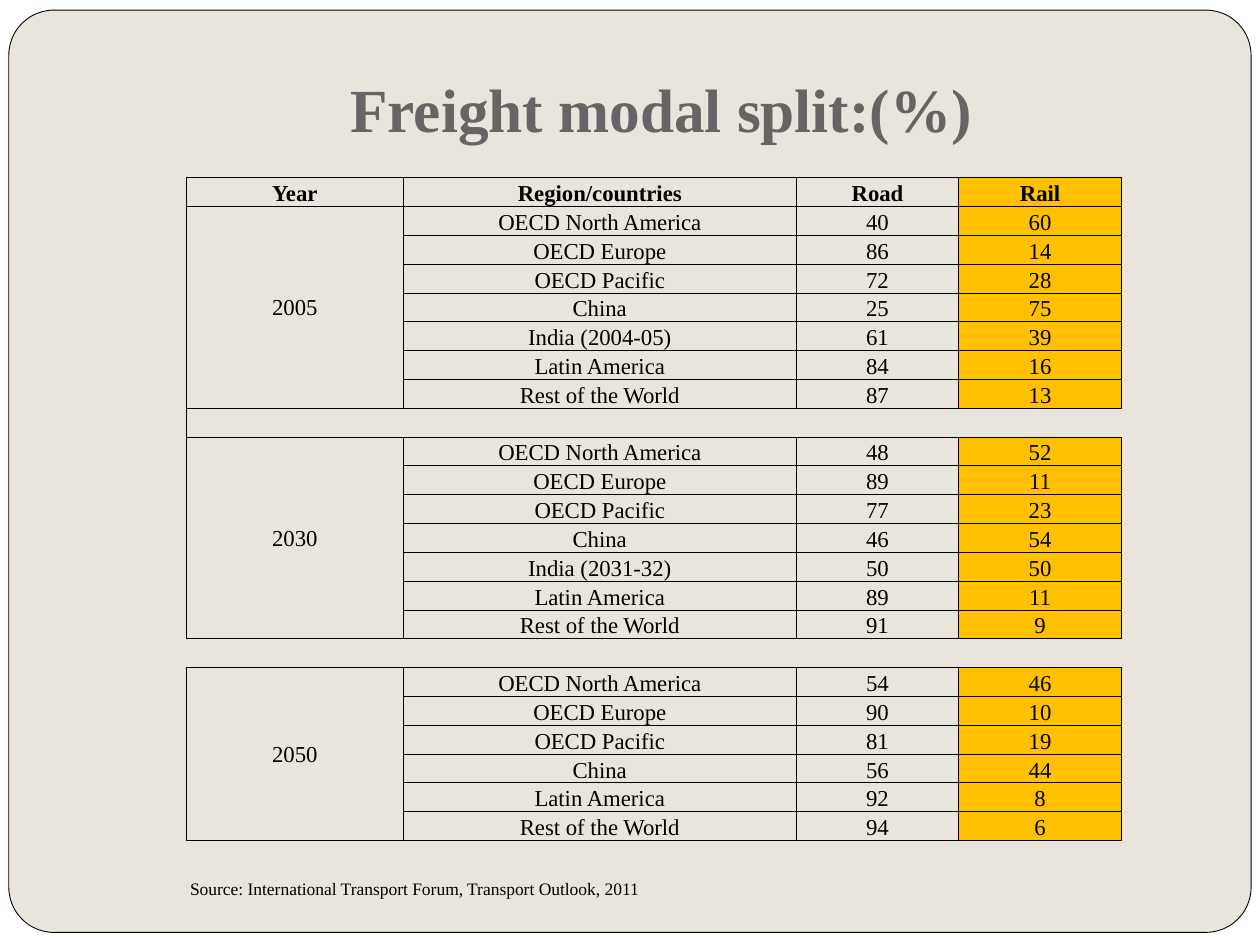
"""Build the freight modal split slide with its table by year and region."""
from lxml import etree
from pptx import Presentation
from pptx.dml.color import RGBColor
from pptx.enum import shapes, text
from pptx.oxml import ns
from pptx.util import Inches, Pt

BLACK = RGBColor(0x00, 0x00, 0x00)
WHITE = RGBColor(0xFF, 0xFF, 0xFF)
SAND = RGBColor(0xE9, 0xE5, 0xDC)
GREY = RGBColor(0x69, 0x64, 0x64)
GOLD = RGBColor(0xFF, 0xC0, 0x00)
FACE = "Times New Roman"
HEAD = ("Year", "Region/countries", "Road", "Rail")
DATA = {
    "2005": [("OECD North America", 40, 60), ("OECD Europe", 86, 14),
             ("OECD Pacific", 72, 28), ("China", 25, 75),
             ("India (2004-05)", 61, 39), ("Latin America", 84, 16),
             ("Rest of the World", 87, 13)],
    "2030": [("OECD North America", 48, 52), ("OECD Europe", 89, 11),
             ("OECD Pacific", 77, 23), ("China", 46, 54),
             ("India (2031-32)", 50, 50), ("Latin America", 89, 11),
             ("Rest of the World", 91, 9)],
    "2050": [("OECD North America", 54, 46), ("OECD Europe", 90, 10),
             ("OECD Pacific", 81, 19), ("China", 56, 44),
             ("Latin America", 92, 8), ("Rest of the World", 94, 6)],
}


def style(para, size, color, bold=False):
    font = para.font
    font.name, font.size, font.bold = FACE, Pt(size), bold
    font.color.rgb = color


def edge(cell, sides):
    props = cell._tc.get_or_add_tcPr()
    for side in "LRTB":
        line = etree.SubElement(props, ns.qn(f"a:ln{side}"), w=str(Pt(0.5)))
        if side in sides:
            fill = etree.SubElement(line, ns.qn("a:solidFill"))
            etree.SubElement(fill, ns.qn("a:srgbClr"), val=str(BLACK))
        else:
            etree.SubElement(line, ns.qn("a:noFill"))


deck = Presentation()
deck.slide_width, deck.slide_height = Inches(10), Inches(7.5)
slide = deck.slides.add_slide(deck.slide_layouts[5])
slide.background.fill.solid()
slide.background.fill.fore_color.rgb = WHITE

panel = slide.shapes.add_shape(
    shapes.MSO_SHAPE.ROUNDED_RECTANGLE,
    Inches(0.07), Inches(0.08), Inches(9.86), Inches(7.32))
panel.adjustments[0] = 0.049
panel.shadow.inherit = False
panel.fill.solid()
panel.fill.fore_color.rgb = SAND
panel.line.color.rgb = BLACK
panel.line.width = Pt(0.5)
slide.shapes.element.insert(2, panel.element)

title = slide.shapes.title
title.left, title.top = Inches(1), Inches(0.39)
title.width, title.height = Inches(8.5), Inches(0.86)
frame = title.text_frame
frame.text = "Freight modal split:(%)"
frame.vertical_anchor = text.MSO_ANCHOR.BOTTOM
frame.margin_bottom = Inches(0.1)
frame.paragraphs[0].alignment = text.PP_ALIGN.CENTER
style(frame.paragraphs[0], 35, GREY, True)

rows, spans, gaps = [HEAD], [], []
for year, group in DATA.items():
    if spans:
        gaps.append(len(rows))
        rows.append(("",) * 4)
    spans.append((len(rows), len(rows) + len(group) - 1))
    rows += [(year if i == 0 else "", *item) for i, item in enumerate(group)]

table = slide.shapes.add_table(
    len(rows), 4, Inches(1.48), Inches(1.41), Inches(7.42), Inches(5.27)).table
table.first_row = table.horz_banding = False
for col, width in zip(table.columns, (1.72, 3.12, 1.29, 1.29)):
    col.width = Inches(width)
for r, row in enumerate(rows):
    for c, value in enumerate(row):
        cell = table.cell(r, c)
        gap = r in gaps
        sides = "LRTB"
        if gap:
            sides = "LTB" if r == gaps[0] and c == 0 else "TB"
        edge(cell, sides)
        if c == 3 and not gap:
            cell.fill.solid()
            cell.fill.fore_color.rgb = GOLD
        else:
            cell.fill.background()
        cell.margin_left = cell.margin_right = cell.margin_top = Inches(0.01)
        cell.margin_bottom = 0
        middle = c == 0 and r > 0
        cell.vertical_anchor = (text.MSO_ANCHOR.MIDDLE if middle
                                else text.MSO_ANCHOR.BOTTOM)
        para = cell.text_frame.paragraphs[0]
        if value != "":
            para.text = str(value)
        para.alignment = text.PP_ALIGN.CENTER
        style(para, 13, BLACK, r == 0)
for first, last in spans:
    table.cell(first, 0).merge(table.cell(last, 0))
for gap in gaps:
    table.cell(gap, 0).merge(table.cell(gap, 3))

note = slide.shapes.add_textbox(
    Inches(1.41), Inches(6.92), Inches(3.98), Inches(0.27)).text_frame
note.word_wrap = True
note.text = "Source: International Transport Forum, Transport Outlook, 2011"
style(note.paragraphs[0], 10, BLACK)

deck.save("out.pptx")
